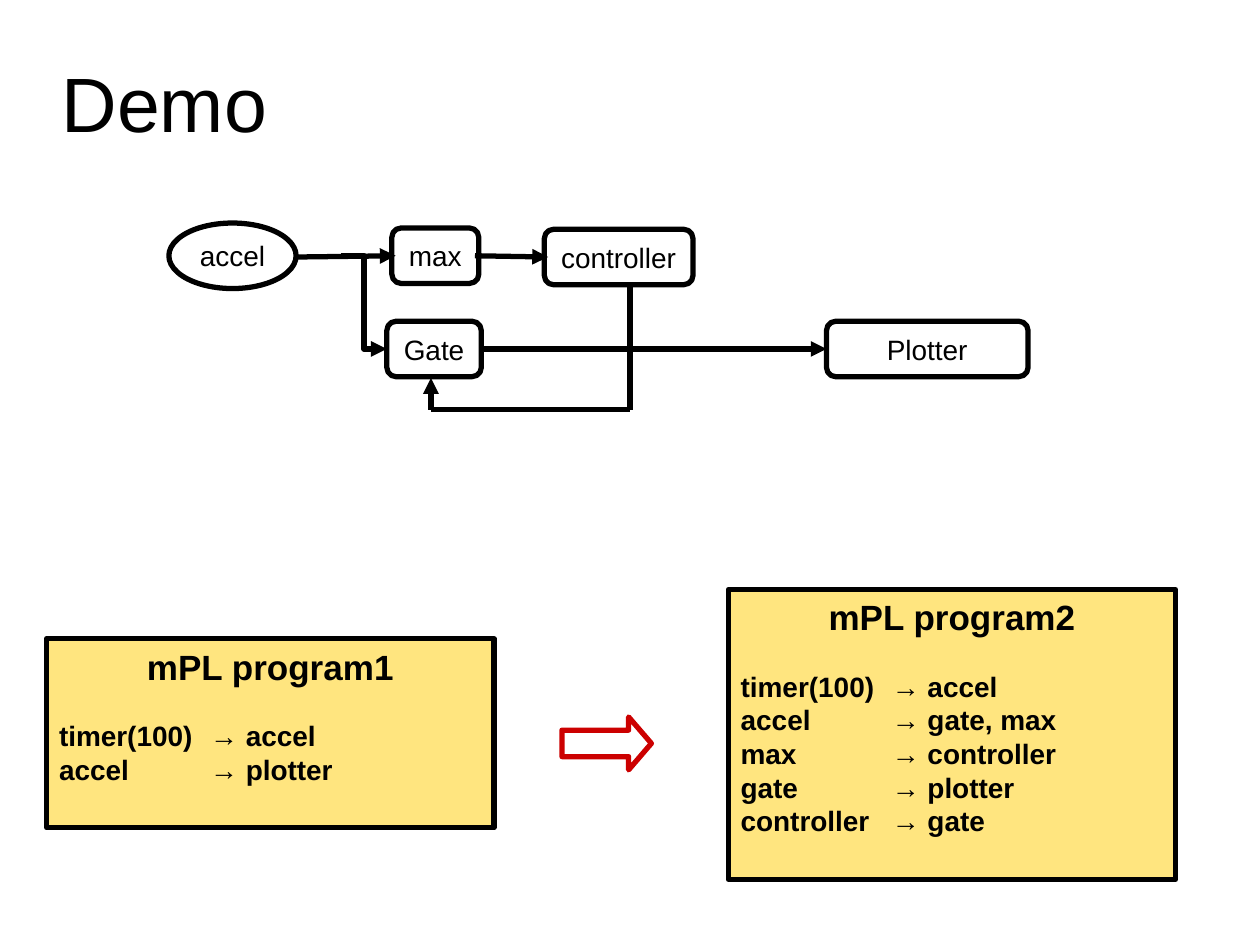
from pptx import Presentation
from pptx.dml.color import RGBColor
from pptx.enum.shapes import MSO_CONNECTOR, MSO_SHAPE
from pptx.enum.text import MSO_ANCHOR, PP_ALIGN
from pptx.oxml.ns import qn
from pptx.util import Inches, Pt
from lxml.etree import SubElement

BLACK = RGBColor(0x00, 0x00, 0x00)
RED = RGBColor(0xCC, 0x00, 0x00)
AMBER = RGBColor(0xFF, 0xCC, 0x00)


def add_outlined(kind, left, top, width, height, color=BLACK):
    shape = slide.shapes.add_shape(
        kind, Inches(left), Inches(top), Inches(width), Inches(height))
    shape.shadow.inherit = False
    shape.fill.background()
    shape.line.color.rgb = color
    shape.line.width = Pt(3)
    return shape


def style_text(para, size, bold=False):
    for span in para.runs:
        span.font.name = "Arial"
        span.font.size = Pt(size)
        span.font.bold = bold
        span.font.color.rgb = BLACK


deck = Presentation()
deck.slide_width = Inches(10)
deck.slide_height = Inches(7.5)
page = deck.slides.add_slide(deck.slide_layouts[6])
slide = page

title = page.shapes.add_textbox(Inches(0.39), Inches(0.31), Inches(9.61), Inches(0.99))
title.text_frame.word_wrap = True
title.text_frame.vertical_anchor = MSO_ANCHOR.MIDDLE
title.text_frame.text = "Demo"
style_text(title.text_frame.paragraphs[0], 44)

nodes = [
    ("accel", MSO_SHAPE.OVAL, 1.34, 1.77, 1.01, 0.52),
    ("max", MSO_SHAPE.ROUNDED_RECTANGLE, 3.11, 1.81, 0.69, 0.44),
    ("controller", MSO_SHAPE.ROUNDED_RECTANGLE, 4.32, 1.82, 1.18, 0.44),
    ("Gate", MSO_SHAPE.ROUNDED_RECTANGLE, 3.07, 2.55, 0.75, 0.44),
    ("Plotter", MSO_SHAPE.ROUNDED_RECTANGLE, 6.56, 2.55, 1.6, 0.44),
]
for label, kind, left, top, width, height in nodes:
    node = add_outlined(kind, left, top, width, height)
    frame = node.text_frame
    frame.word_wrap = label in ("accel", "Plotter")
    frame.vertical_anchor = MSO_ANCHOR.MIDDLE
    frame.text = label
    frame.paragraphs[0].alignment = PP_ALIGN.CENTER
    style_text(frame.paragraphs[0], 16)

STRAIGHT, ELBOW = MSO_CONNECTOR.STRAIGHT, MSO_CONNECTOR.ELBOW
links = [
    (STRAIGHT, 2.35, 2.04, 3.14, 2.03, True),
    (STRAIGHT, 3.77, 2.03, 4.35, 2.04, True),
    (ELBOW, 2.71, 2.03, 3.07, 2.77, True),
    (STRAIGHT, 3.81, 2.77, 6.56, 2.77, True),
    (STRAIGHT, 3.42, 3.25, 3.42, 3, True),
    (STRAIGHT, 3.42, 3.25, 5, 3.25, False),
    (STRAIGHT, 5, 3.25, 5, 2.25, False),
]
for kind, x1, y1, x2, y2, arrow in links:
    link = page.shapes.add_connector(kind, Inches(x1), Inches(y1), Inches(x2), Inches(y2))
    link.line.color.rgb = BLACK
    link.line.width = Pt(3)
    if arrow:
        SubElement(link.line._get_or_add_ln(), qn("a:tailEnd"), type="triangle")
    SubElement(link._element.spPr, qn("a:effectLst"))

programs = [
    ("mPL program1", 0.37, 5.07, 1.5, [("timer(100)", "accel"), ("accel", "plotter")]),
    ("mPL program2", 5.78, 4.68, 2.3, [
        ("timer(100)", "accel"), ("accel", "gate, max"), ("max", "controller"),
        ("gate", "plotter"), ("controller", "gate")]),
]
for heading, left, top, height, rules in programs:
    box = add_outlined(MSO_SHAPE.RECTANGLE, left, top, 3.55, height)
    box.fill.solid()
    box.fill.fore_color.rgb = AMBER
    color = box._element.spPr.find(qn("a:solidFill")).find(qn("a:srgbClr"))
    SubElement(color, qn("a:alpha"), val="50000")
    frame = box.text_frame
    frame.word_wrap = True
    frame.vertical_anchor = MSO_ANCHOR.TOP
    frame.text = heading
    frame.paragraphs[0].alignment = PP_ALIGN.CENTER
    frame.paragraphs[0].space_after = Pt(18)
    style_text(frame.paragraphs[0], 20, True)
    for source, target in rules:
        para = frame.add_paragraph()
        para.text = f"{source}\t→ {target}"
        para.alignment = PP_ALIGN.LEFT
        tabs = SubElement(para._p.get_or_add_pPr(), qn("a:tabLst"))
        SubElement(tabs, qn("a:tab"), pos=str(Inches(1.2)), algn="l")
        style_text(para, 16, True)

arrow = add_outlined(MSO_SHAPE.RIGHT_ARROW, 4.46, 5.69, 0.71, 0.42, RED)
arrow.adjustments[1] = 0.43

deck.save("out.pptx")
